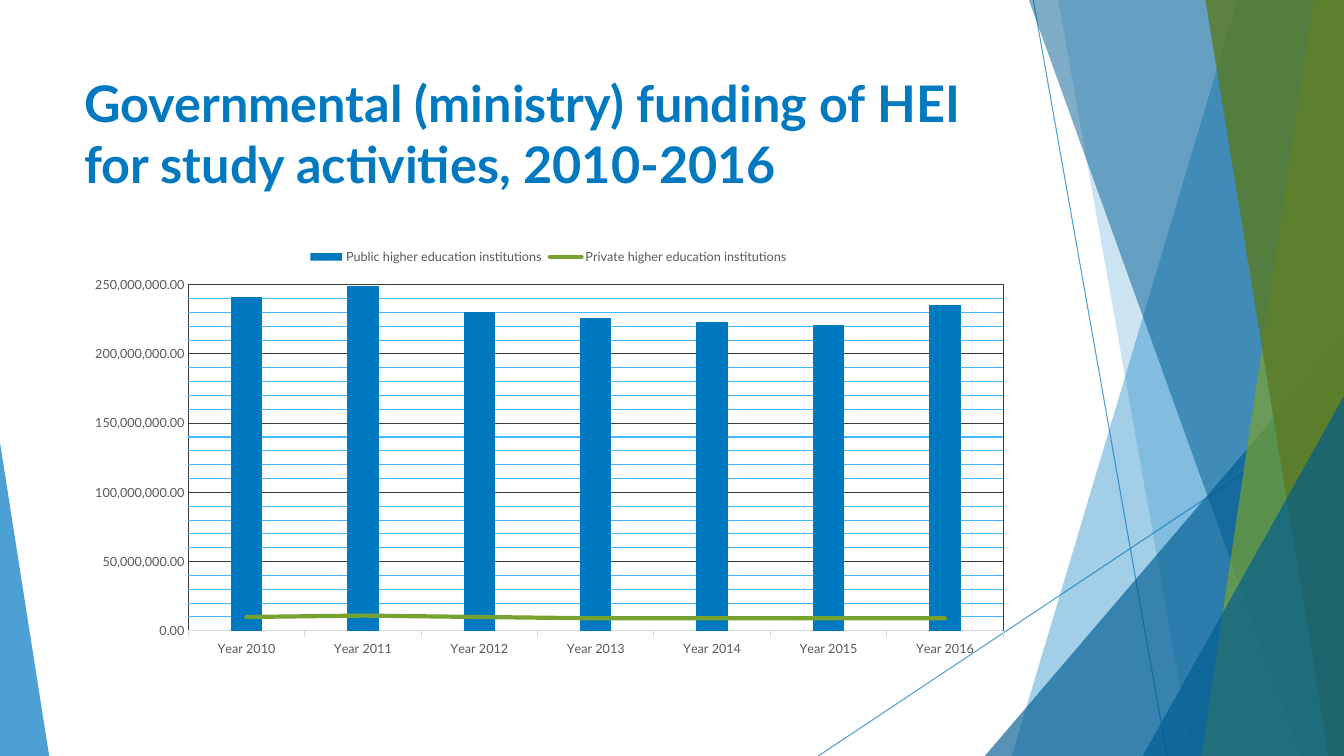
"""Build a slide on ministry funding of higher education institutions."""
from lxml import etree
from pptx import Presentation
from pptx.chart.data import CategoryChartData
from pptx.dml.color import RGBColor
from pptx.enum.chart import XL_CHART_TYPE, XL_LEGEND_POSITION, XL_MARKER_STYLE, XL_TICK_MARK
from pptx.enum.shapes import MSO_CONNECTOR, MSO_SHAPE
from pptx.oxml import parse_xml
from pptx.oxml.ns import nsdecls, qn
from pptx.util import Cm, Pt

STRAIGHT = MSO_CONNECTOR.STRAIGHT
TRIANGLE = MSO_SHAPE.ISOSCELES_TRIANGLE
COLUMNS = XL_CHART_TYPE.COLUMN_CLUSTERED
LEGEND_TOP = XL_LEGEND_POSITION.TOP
NO_MARKER = XL_MARKER_STYLE.NONE
TICK_NONE, TICK_OUT = XL_TICK_MARK.NONE, XL_TICK_MARK.OUTSIDE

BLUE = RGBColor(0x00, 0x79, 0xC1)
DEEP_BLUE = RGBColor(0x00, 0x5B, 0x91)
LIGHT_BLUE = RGBColor(0x41, 0xB8, 0xFF)
GREEN = RGBColor(0x78, 0xA2, 0x2F)
DEEP_GREEN = RGBColor(0x5A, 0x7A, 0x23)
BLACK = RGBColor(0x00, 0x00, 0x00)
CHARCOAL = RGBColor(0x3B, 0x3B, 0x3B)
GRAY = RGBColor(0x59, 0x59, 0x59)
PALE_GRAY = RGBColor(0xD9, 0xD9, 0xD9)
FONT = "Lato"
WIDTH, HEIGHT = 33.87, 19.05


def fade(shape, percent):
    for color in shape._element.spPr.iter(qn("a:srgbClr")):
        etree.SubElement(color, qn("a:alpha"), val=str(percent * 1000))


def style_font(font, size, color):
    font.name, font.size, font.color.rgb = FONT, Pt(size), color


deck = Presentation()
deck.slide_width, deck.slide_height = Cm(WIDTH), Cm(HEIGHT)
page = deck.slides.add_slide(deck.slide_layouts[6])
shapes = page.shapes

for x1, y1, x2, y2 in [(26.04, 0, 29.41, HEIGHT), (WIDTH, 10.24, 20.62, HEIGHT)]:
    ray = shapes.add_connector(STRAIGHT, Cm(x1), Cm(y1), Cm(x2), Cm(y2))
    ray.line.color.rgb, ray.line.width = BLUE, Pt(0.75)
    etree.SubElement(ray._element.spPr, qn("a:effectLst"))
    fade(ray, 70)

facets = [
    ((31.19, 25.5), BLUE, 36),
    ((26.67, 30.05), BLUE, 20),
    ((24.82, 8.46, 9.05, 1), DEEP_BLUE, 66),
    ((25.93, 32.79), DEEP_BLUE, 50),
    ((33.1, 30.28), GREEN, 70),
    ((30.38, 33.48), DEEP_GREEN, 80),
    ((28.8, 9.98, 5.07, 1), DEEP_BLUE, 66),
    ((0, 11.15, 1.24, 0), BLUE, 70),
]
for geometry, color, opacity in facets:
    if len(geometry) == 2:
        top_x, bottom_x = geometry
        outline = shapes.build_freeform(Cm(top_x), Cm(0))
        corners = [(WIDTH, 0), (WIDTH, HEIGHT), (bottom_x, HEIGHT)]
        outline.add_line_segments([(Cm(x), Cm(y)) for x, y in corners])
        facet = outline.convert_to_shape()
    else:
        left, top, width, apex = geometry
        facet = shapes.add_shape(TRIANGLE, Cm(left), Cm(top), Cm(width), Cm(HEIGHT - top))
        facet.adjustments[0] = apex
    facet.shadow.inherit = False
    facet.fill.solid()
    facet.fill.fore_color.rgb = color
    facet.line.fill.background()
    fade(facet, opacity)

title = shapes.add_textbox(Cm(1.88), Cm(1.7), Cm(23.88), Cm(3.66))
title.text_frame.word_wrap = True
para = title.text_frame.paragraphs[0]
para.text = "Governmental (ministry) funding of HEI for study activities, 2010-2016"
style_font(para.font, 36, BLUE)
para.font.bold = True

MILLION = 1_000_000
public = [241, 249, 230, 226, 223, 221, 235]
private = [10, 11, 10, 9, 9, 9, 9]
data = CategoryChartData(number_format="#,##0.00")
data.categories = [f"Year {year}" for year in range(2010, 2017)]
data.add_series("Public higher education institutions", [v * MILLION for v in public])
data.add_series("Private higher education institutions", [v * MILLION for v in private])
chart = shapes.add_chart(COLUMNS, Cm(1.88), Cm(5.99), Cm(23.88), Cm(10.77), data).chart
style_font(chart.font, 10, BLACK)
chart.has_title = False
chart.has_legend = True
chart.legend.position = LEGEND_TOP
chart.legend.include_in_layout = False
style_font(chart.legend.font, 9, GRAY)

years = chart.category_axis
years.major_tick_mark = TICK_OUT
years.format.line.color.rgb, years.format.line.width = PALE_GRAY, Pt(0.75)
style_font(years.tick_labels.font, 9, GRAY)

amounts = chart.value_axis
amounts.minimum_scale, amounts.maximum_scale = 0, 250 * MILLION
amounts.major_unit, amounts.minor_unit = 50 * MILLION, 10 * MILLION
amounts.major_tick_mark = TICK_NONE
amounts.format.line.fill.background()
amounts.tick_labels.number_format = "#,##0.00"
amounts.tick_labels.number_format_is_linked = False
style_font(amounts.tick_labels.font, 9, GRAY)
grid_line = amounts.major_gridlines.format.line
grid_line.color.rgb, grid_line.width = CHARCOAL, Pt(0.75)
amounts.has_minor_gridlines = True
minor_grid = amounts._element.find(qn("c:minorGridlines"))
minor_grid.append(parse_xml(
    f'<c:spPr {nsdecls("c", "a")}><a:ln w="9525"><a:solidFill>'
    f'<a:srgbClr val="{LIGHT_BLUE}"/></a:solidFill></a:ln></c:spPr>'))

columns = chart.plots[0]
columns.gap_width = 269
columns.vary_by_categories = False
columns.series[0].format.fill.solid()
columns.series[0].format.fill.fore_color.rgb = BLUE

bar_xml = columns._element
plot_area = bar_xml.getparent()
private_xml = bar_xml.findall(qn("c:ser"))[1]
for invert in private_xml.findall(qn("c:invertIfNegative")):
    private_xml.remove(invert)
line_xml = parse_xml(
    f'<c:lineChart {nsdecls("c")}><c:grouping val="standard"/><c:varyColors val="0"/>'
    '<c:marker val="1"/></c:lineChart>')
line_xml.insert(2, private_xml)
for axis_id in bar_xml.findall(qn("c:axId")):
    etree.SubElement(line_xml, qn("c:axId"), val=axis_id.get("val"))
bar_xml.addnext(line_xml)

trend = chart.plots[1].series[0]
trend.smooth = False
trend.marker.style = NO_MARKER
trend.format.line.color.rgb, trend.format.line.width = GREEN, Pt(3)
private_xml.find(qn("c:spPr")).find(qn("a:ln")).set("cap", "rnd")

for layout in plot_area.findall(qn("c:layout")):
    plot_area.remove(layout)
plot_area.insert(0, parse_xml(
    f'<c:layout {nsdecls("c")}><c:manualLayout><c:layoutTarget val="inner"/>'
    '<c:xMode val="edge"/><c:yMode val="edge"/><c:x val="0.12"/><c:y val="0.11"/>'
    '<c:w val="0.86"/><c:h val="0.81"/></c:manualLayout></c:layout>'))
plot_area.append(parse_xml(
    f'<c:spPr {nsdecls("c", "a")}><a:noFill/><a:ln w="9525"><a:solidFill>'
    f'<a:srgbClr val="{CHARCOAL}"/></a:solidFill></a:ln></c:spPr>'))

deck.save("out.pptx")
